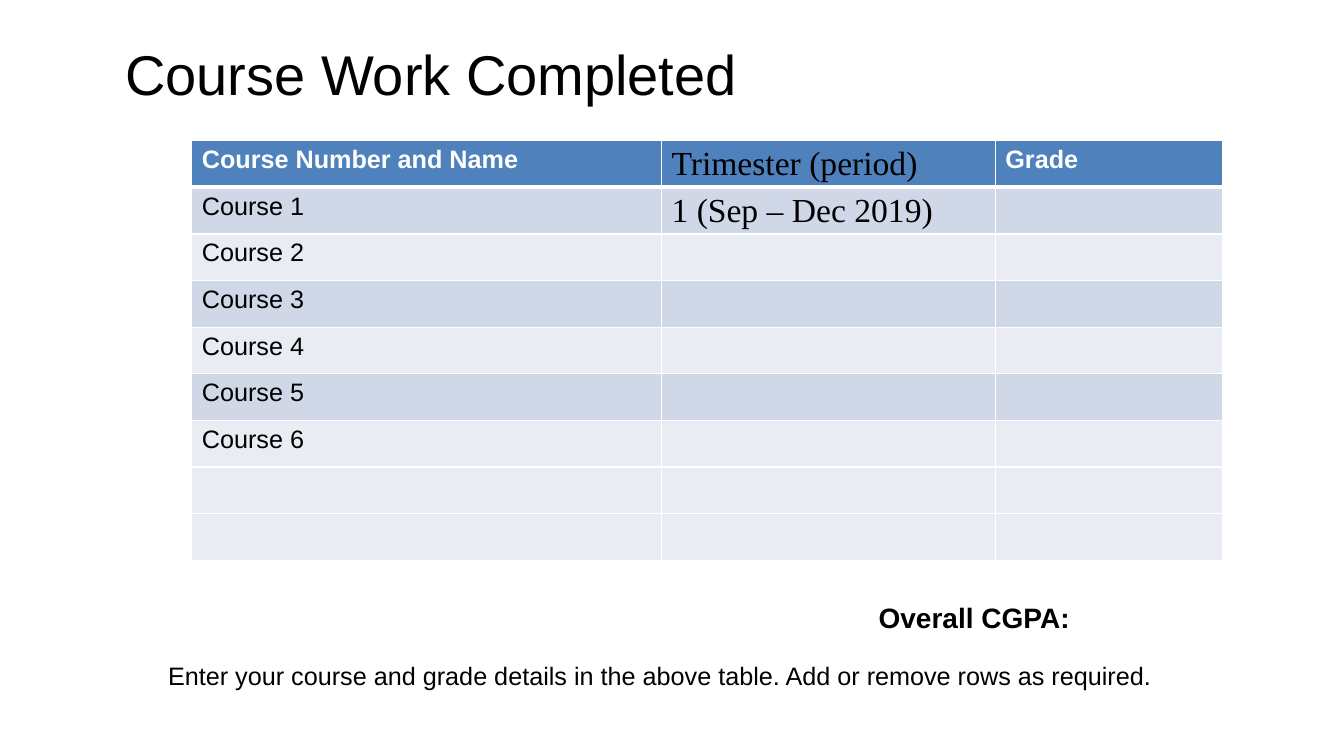
from lxml.etree import SubElement
from pptx import Presentation
from pptx.dml.color import RGBColor
from pptx.enum.text import MSO_ANCHOR, PP_ALIGN
from pptx.oxml.ns import qn
from pptx.util import Pt

BLACK = RGBColor(0x00, 0x00, 0x00)
WHITE = RGBColor(0xFF, 0xFF, 0xFF)
BLUE = RGBColor(0x4F, 0x81, 0xBD)
DARK = RGBColor(0xD0, 0xD8, 0xE7)
PALE = RGBColor(0xE9, 0xEC, 0xF3)
SANS = "Arial"
SERIF = "Times New Roman"
WIDTHS = (335.5, 238.5, 162)
HEADS = ("Course Number and Name", "Trimester (period)", "Grade")
TERM = "1 (Sep – Dec 2019)"
COURSES = 6
SPARE = 2


def add_run(para, text, size, face=SANS, color=BLACK, bold=False):
    """Add one formatted run to a paragraph."""
    run = para.add_run()
    run.text = text
    font = run.font
    font.size, font.name, font.bold = Pt(size), face, bold
    font.color.rgb = color


def add_edge(cell, side, width):
    """Draw one white border of a cell."""
    line = SubElement(cell._tc.get_or_add_tcPr(), qn(f"a:{side}"), w=str(Pt(width)))
    fill = SubElement(line, qn("a:solidFill"))
    SubElement(fill, qn("a:srgbClr"), val=str(WHITE))


def add_title(slide, left, top, width, height):
    """Place and format the slide title."""
    title = slide.shapes.title
    title.left, title.top = Pt(left), Pt(top)
    title.width, title.height = Pt(width), Pt(height)
    frame = title.text_frame
    frame.margin_left = frame.margin_right = 0
    frame.margin_top = frame.margin_bottom = 0
    frame.vertical_anchor = MSO_ANCHOR.MIDDLE
    frame.word_wrap = True
    para = frame.paragraphs[0]
    para.alignment = PP_ALIGN.LEFT
    para.line_spacing = 0.9
    add_run(para, "Course Work Completed", 40)


def add_grades(slide, left, top, height):
    """Place the table of courses, periods and grades."""
    rows = [HEADS]
    rows += [(f"Course {n}", TERM if n == 1 else "", "") for n in range(1, COURSES + 1)]
    rows += [("", "", "")] * SPARE
    frame = slide.shapes.add_table(
        len(rows), len(WIDTHS), Pt(left), Pt(top), Pt(sum(WIDTHS)), Pt(height))
    table = frame.table
    for col, width in zip(table.columns, WIDTHS):
        col.width = Pt(width)
    for r, texts in enumerate(rows):
        table.rows[r].height = Pt(height / len(rows))
        head = r == 0
        fill = BLUE if head else DARK if r % 2 and r <= COURSES else PALE
        for c, text in enumerate(texts):
            cell = table.cell(r, c)
            cell.margin_bottom = Pt(2)
            add_edge(cell, "lnL", 0.96)
            add_edge(cell, "lnR", 0.96)
            add_edge(cell, "lnT", 3 if r == 1 else 0.96)
            add_edge(cell, "lnB", 3 if head else 0.96)
            cell.fill.solid()
            cell.fill.fore_color.rgb = fill
            para = cell.text_frame.paragraphs[0]
            if not text:
                para.font.size = Pt(18)
            elif c == 1:
                add_run(para, text, 24, SERIF)
            else:
                add_run(para, text, 18, SANS, WHITE if head else BLACK, head)


def add_note(slide, left, top, width, height, text, size, bold=False):
    """Place one line of text below the table."""
    box = slide.shapes.add_textbox(Pt(left), Pt(top), Pt(width), Pt(height))
    box.text_frame.word_wrap = True
    add_run(box.text_frame.paragraphs[0], text, size, bold=bold)


def main():
    """Build the slide and save it."""
    deck = Presentation()
    deck.slide_width, deck.slide_height = Pt(960), Pt(540)
    slide = deck.slides.add_slide(deck.slide_layouts[5])
    add_title(slide, 89.5, 10, 864, 90)
    add_grades(slide, 137, 100.5, 300)
    add_note(slide, 620.5, 425.5, 246, 31, "Overall CGPA:", 20, True)
    add_note(slide, 113, 468, 750, 29,
             "Enter your course and grade details in the above table. "
             "Add or remove rows as required.", 18)
    deck.save("out.pptx")


if __name__ == "__main__":
    main()
